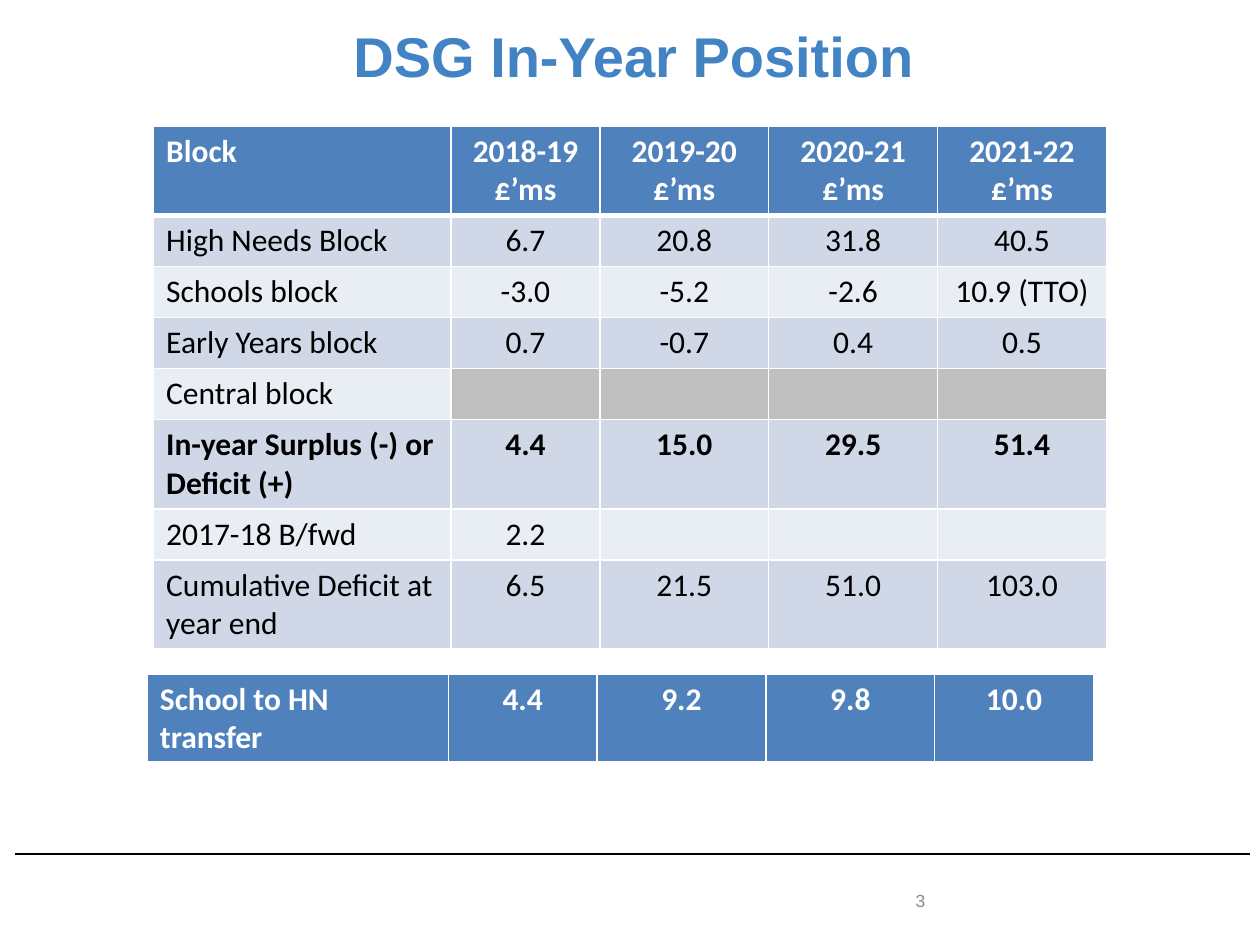
from dataclasses import dataclass
from typing import Any

from lxml.etree import SubElement as Sub
from pptx import Presentation
from pptx.dml.color import RGBColor
from pptx.enum.shapes import MSO_CONNECTOR as Link
from pptx.enum.text import MSO_ANCHOR as Anchor, PP_ALIGN as Align
from pptx.oxml.ns import qn
from pptx.util import Pt

WHITE = RGBColor(0xFF, 0xFF, 0xFF)
BLACK = RGBColor(0x00, 0x00, 0x00)
TITLE = RGBColor(0x42, 0x83, 0xC4)
BLUE = RGBColor(0x4F, 0x81, 0xBD)
DARK = RGBColor(0xD0, 0xD8, 0xE8)
LIGHT = RGBColor(0xE9, 0xED, 0xF4)
GREY = RGBColor(0xBF, 0xBF, 0xBF)
FAINT = RGBColor(0x8C, 0x8C, 0x8C)

ARIAL = {"name": "Arial", "size": Pt(32), "bold": True}
SMALL = {"name": "Arial", "size": Pt(10), "bold": False}
PLAIN = {"name": "Calibri", "size": Pt(18), "bold": False}
BOLD = PLAIN | {"bold": True}

ONE, TWO = 29.2, 51
THIN, THICK = 1, 3


@dataclass
class Row:
    label: str
    vals: tuple[str, ...]
    fill: RGBColor
    high: float = ONE
    font: Any = None
    ink: RGBColor = BLACK
    rest: RGBColor | None = None
    top: float = THIN
    base: float = THIN


@dataclass
class Grid:
    left: float
    top: float
    cols: tuple[float, ...]
    rows: list[Row]


YEARS = tuple(f"20{y}-{y + 1}\n£’ms" for y in range(18, 22))
BLANK = ("",) * 4

MAIN = Grid(87.8, 72, (170, 85, 96.5, 96.5, 96.5), [
    Row("Block", YEARS, BLUE, TWO, BOLD, WHITE, base=THICK),
    Row("High Needs Block", ("6.7", "20.8", "31.8", "40.5"), DARK, top=THICK),
    Row("Schools block", ("-3.0", "-5.2", "-2.6", "10.9 (TTO)"), LIGHT),
    Row("Early Years block", ("0.7", "-0.7", "0.4", "0.5"), DARK),
    Row("Central block", BLANK, LIGHT, rest=GREY),
    Row("In-year Surplus (-) or Deficit (+)",
        ("4.4", "15.0", "29.5", "51.4"), DARK, TWO, BOLD),
    Row("2017-18 B/fwd", ("2.2", "", "", ""), LIGHT),
    Row("Cumulative Deficit at year end",
        ("6.5", "21.5", "51.0", "103.0"), DARK, TWO),
])
MOVE = Grid(84.2, 385.2, (172, 85, 96.5, 96.5, 90.7), [
    Row("School to HN transfer", ("4.4", "9.2", "9.8", "10.0"),
        BLUE, TWO, BOLD, WHITE, base=THICK),
])


def style(font: Any, form: dict[str, Any], ink: RGBColor) -> None:
    for key, val in form.items():
        setattr(font, key, val)
    font.color.rgb = ink


def place(shape: Any, left: float, top: float, wide: float, high: float) -> None:
    box = {"left": left, "top": top, "width": wide, "height": high}
    for key, val in box.items():
        setattr(shape, key, Pt(val))


def edge(cell: Any, top: float, base: float) -> None:
    props = cell._tc.get_or_add_tcPr()
    for side, size in {"L": THIN, "R": THIN, "T": top, "B": base}.items():
        line = Sub(props, qn(f"a:ln{side}"), w=str(Pt(size)))
        Sub(Sub(line, qn("a:solidFill")), qn("a:srgbClr"), val=str(WHITE))


def draw_cell(cell: Any, text: str, row: Row, first: bool) -> None:
    edge(cell, row.top, row.base)
    cell.fill.solid()
    cell.fill.fore_color.rgb = row.fill if first else row.rest or row.fill
    cell.text_frame.text = text
    for para in cell.text_frame.paragraphs:
        para.alignment = Align.LEFT if first else Align.CENTER
        style(para.font, row.font or PLAIN, row.ink)


def draw_grid(slide: Any, grid: Grid) -> None:
    high = sum(row.high for row in grid.rows)
    table = slide.shapes.add_table(
        len(grid.rows), len(grid.cols), Pt(grid.left), Pt(grid.top),
        Pt(sum(grid.cols)), Pt(high)).table
    for col, wide in zip(table.columns, grid.cols):
        col.width = Pt(wide)
    for line, row in zip(table.rows, grid.rows):
        line.height = Pt(row.high)
        for i, text in enumerate((row.label, *row.vals)):
            draw_cell(line.cells[i], text, row, i == 0)


def draw_text(shape: Any, text: str, form: dict[str, Any], ink: RGBColor,
              align: Any) -> None:
    frame = shape.text_frame
    frame.text = text
    frame.word_wrap = True
    frame.vertical_anchor = Anchor.MIDDLE
    para = frame.paragraphs[0]
    para.alignment = align
    style(para.font, form, ink)


def draw_rule(slide: Any) -> None:
    rule = slide.shapes.add_connector(
        Link.STRAIGHT, Pt(8.6), Pt(488.2), Pt(714.2), Pt(488.2))
    rule.line.color.rgb = BLACK
    rule.line.width = Pt(1)
    Sub(rule._element.spPr, qn("a:effectLst"))


def main() -> None:
    deck = Presentation()
    deck.slide_width, deck.slide_height = Pt(720), Pt(540)
    slide = deck.slides.add_slide(deck.slide_layouts[5])
    draw_rule(slide)
    title = slide.shapes.title
    place(title, 38.2, -13.7, 648, 90)
    draw_text(title, "DSG In-Year Position", ARIAL, TITLE, Align.CENTER)
    page = slide.shapes.add_textbox(Pt(516.2), Pt(500.4), Pt(168), Pt(28.8))
    draw_text(page, "3", SMALL, FAINT, Align.LEFT)
    for grid in (MAIN, MOVE):
        draw_grid(slide, grid)
    deck.save("out.pptx")


if __name__ == "__main__":
    main()
